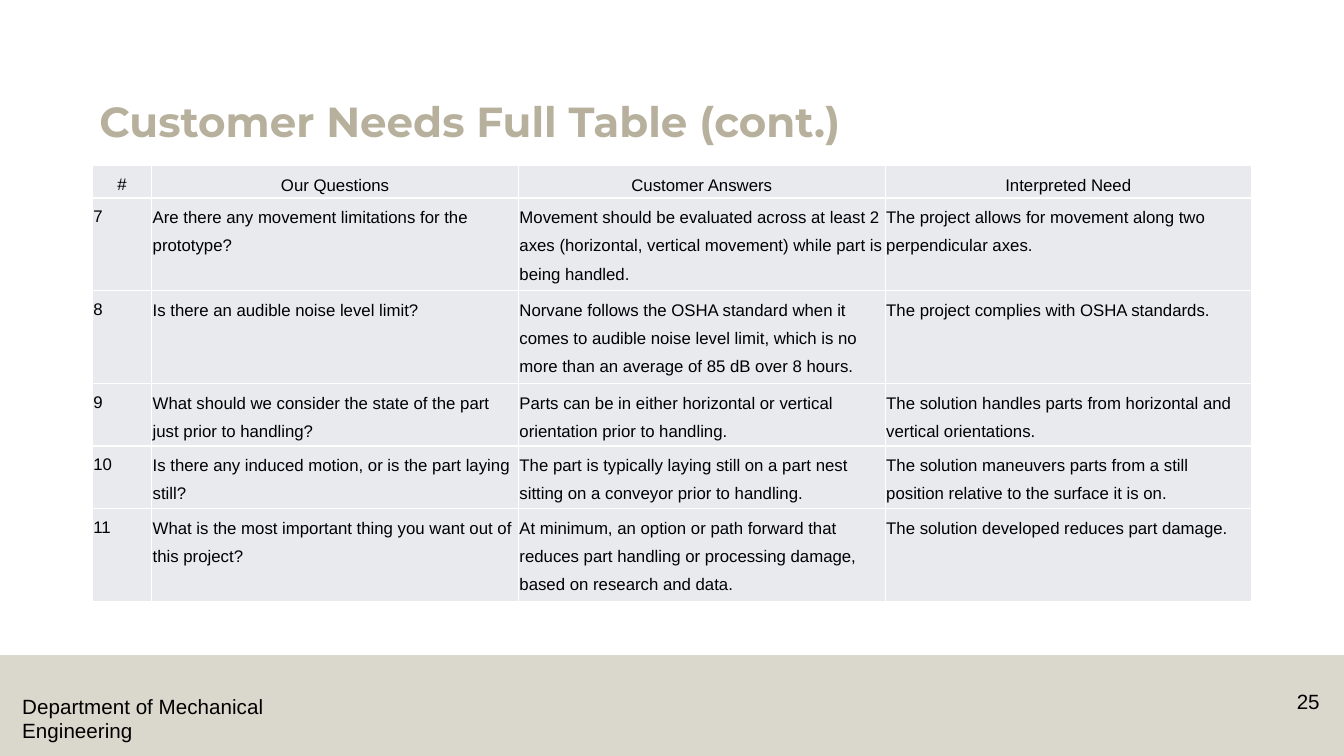
from lxml.etree import SubElement
from pptx import Presentation
from pptx.dml.color import RGBColor
from pptx.enum.shapes import MSO_SHAPE
from pptx.enum.text import MSO_ANCHOR, PP_ALIGN
from pptx.oxml import parse_xml
from pptx.oxml.ns import nsdecls, qn
from pptx.util import Pt

TAUPE, BLACK, WHITE, PALE_GRAY = "B7B09C", "000000", "FFFFFF", "E8EAEE"
COLUMN_WIDTHS = [42.4, 262, 262, 261.6]
LINE_HEIGHT = 20.7
ROW_LINES = [1, 3, 3, 2, 2, 3]
NEEDS = [
    ("#", "Our Questions", "Customer Answers", "Interpreted Need"),
    ("7", "Are there any movement limitations for the prototype?",
     "Movement should be evaluated across at least 2 axes (horizontal, vertical movement) "
     "while part is being handled.",
     "The project allows for movement along two perpendicular axes."),
    ("8", "Is there an audible noise level limit?",
     "Norvane follows the OSHA standard when it comes to audible noise level limit, "
     "which is no more than an average of 85 dB over 8 hours.",
     "The project complies with OSHA standards."),
    ("9", "What should we consider the state of the part just prior to handling?",
     "Parts can be in either horizontal or vertical orientation prior to handling.",
     "The solution handles parts from horizontal and vertical orientations."),
    ("10", "Is there any induced motion, or is the part laying still?",
     "The part is typically laying still on a part nest sitting on a conveyor prior to handling.",
     "The solution maneuvers parts from a still position relative to the surface it is on."),
    ("11", "What is the most important thing you want out of this project?",
     "At minimum, an option or path forward that reduces part handling or processing damage, "
     "based on research and data.",
     "The solution developed reduces part damage."),
]


def color(hex_string):
    """Turn a hex string into a color."""
    return RGBColor.from_string(hex_string)


def write_text(text_frame, text, size=12, font="Arial", fill=BLACK, bold=False,
               align=PP_ALIGN.LEFT, spacing=1.0):
    """Write one formatted paragraph into a text frame."""
    paragraph = text_frame.paragraphs[0]
    paragraph.alignment = align
    paragraph.line_spacing = spacing
    run = paragraph.add_run()
    run.text = text
    run.font.size = Pt(size)
    run.font.name = font
    run.font.bold = bold
    run.font.color.rgb = color(fill)


def add_text(slide, text, left, top, width, height, inset=(7.2, 3.6),
             anchor=MSO_ANCHOR.TOP, **text_format):
    """Add a wrapping text box."""
    text_frame = slide.shapes.add_textbox(Pt(left), Pt(top), Pt(width), Pt(height)).text_frame
    text_frame.word_wrap = True
    text_frame.vertical_anchor = anchor
    text_frame.margin_left = text_frame.margin_right = Pt(inset[0])
    text_frame.margin_top = text_frame.margin_bottom = Pt(inset[1])
    write_text(text_frame, text, **text_format)


def add_footer(slide, left, top, width, height):
    """Add the translucent band with the department and the slide number."""
    band = slide.shapes.add_shape(MSO_SHAPE.RECTANGLE, Pt(left), Pt(top), Pt(width), Pt(height))
    band.shadow.inherit = False
    band.line.fill.background()
    band.fill.solid()
    band.fill.fore_color.rgb = color(TAUPE)
    band_color = band.fill._xPr.find(qn("a:solidFill"))[0]
    SubElement(band_color, qn("a:alpha"), val="50000")
    add_text(slide, "Department of Mechanical Engineering", left + 8.8, top + 23.8, 258.5, 42.5,
             size=14.7)
    add_text(slide, "25", left + width - 65.6, top + 20.9, 55.4, 28.8, size=14.7,
             align=PP_ALIGN.RIGHT)


def add_borders(cell, line_color):
    """Draw a one-point line on each side of a table cell."""
    properties = cell._tc.get_or_add_tcPr()
    for position, side in enumerate(("lnL", "lnR", "lnT", "lnB")):
        properties.insert(position, parse_xml(
            f'<a:{side} {nsdecls("a")} w="12700"><a:solidFill>'
            f'<a:srgbClr val="{line_color}"/></a:solidFill></a:{side}>'))


def add_needs_table(slide, left, top, width):
    """Add the table of customer needs."""
    height = sum(ROW_LINES) * LINE_HEIGHT
    table = slide.shapes.add_table(len(NEEDS), len(COLUMN_WIDTHS), Pt(left), Pt(top),
                                   Pt(width), Pt(height)).table
    table.first_row = table.horz_banding = False
    for column, column_width in zip(table.columns, COLUMN_WIDTHS):
        column.width = Pt(column_width)
    for row_index, (row, lines, texts) in enumerate(zip(table.rows, ROW_LINES, NEEDS)):
        row.height = Pt(lines * LINE_HEIGHT)
        for column_index, (cell, text) in enumerate(zip(row.cells, texts)):
            cell.margin_left = cell.margin_right = Pt(0.72)
            cell.margin_top = cell.margin_bottom = Pt(0.72 if column_index else 0)
            cell.fill.solid()
            cell.fill.fore_color.rgb = color(PALE_GRAY)
            add_borders(cell, WHITE)
            write_text(cell.text_frame, text, spacing=1.5,
                       align=PP_ALIGN.LEFT if row_index else PP_ALIGN.CENTER)


def main():
    """Build and save the slide."""
    presentation = Presentation()
    presentation.slide_width, presentation.slide_height = Pt(960), Pt(540)
    slide = presentation.slides.add_slide(presentation.slide_layouts[6])
    add_footer(slide, 0, 468, 960, 72)
    add_text(slide, "Customer Needs Full Table (cont.)", 66, 28.8, 828, 78.5, inset=(5, 2.9),
             anchor=MSO_ANCHOR.BOTTOM, size=30, font="Montserrat", fill=TAUPE, bold=True,
             spacing=0.9)
    add_needs_table(slide, 66, 118.4, sum(COLUMN_WIDTHS))
    presentation.save("out.pptx")


if __name__ == "__main__":
    main()
